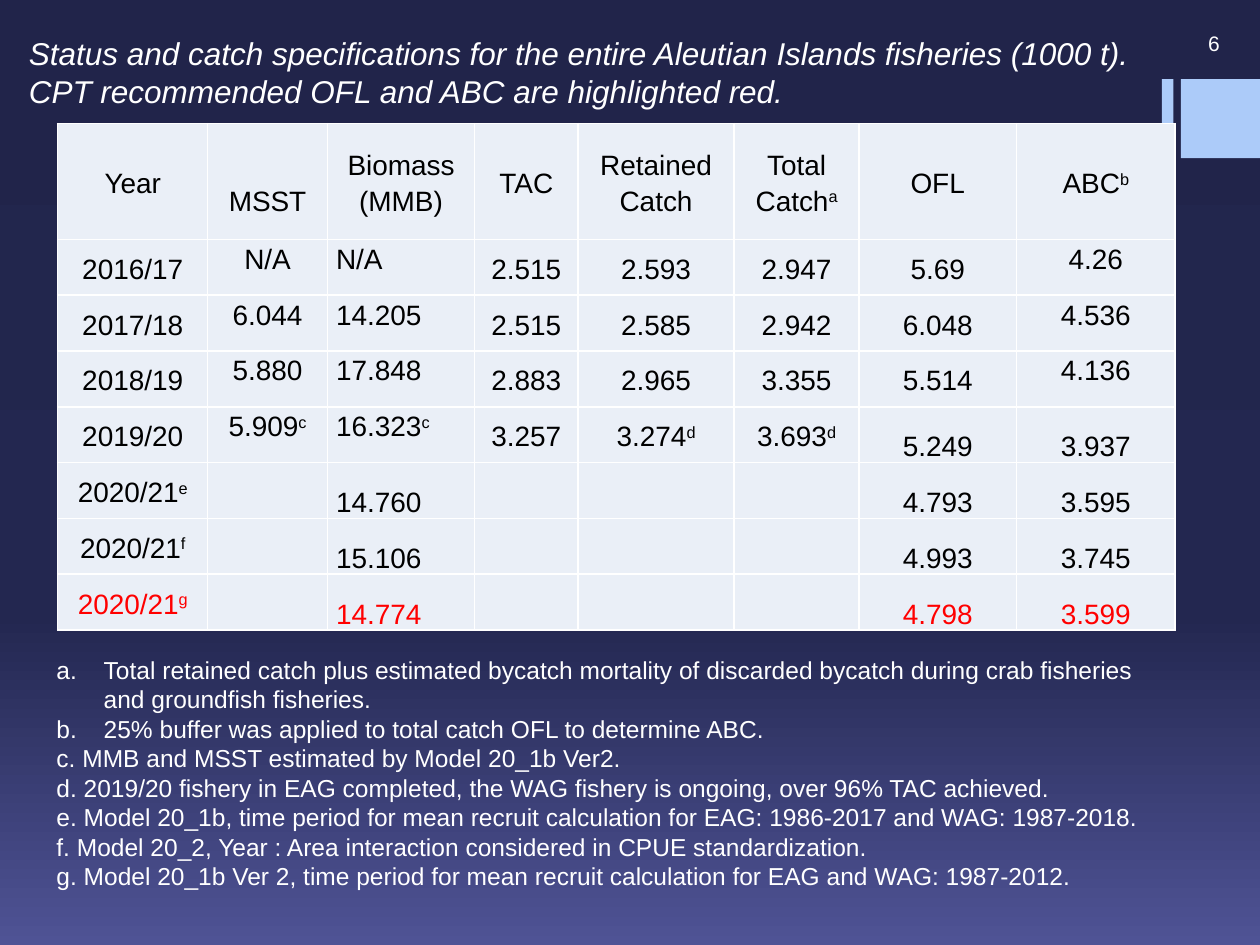
from copy import deepcopy

from pptx import Presentation
from pptx.dml.color import RGBColor
from pptx.enum.shapes import MSO_SHAPE
from pptx.enum.text import MSO_ANCHOR, PP_ALIGN
from pptx.oxml import parse_xml
from pptx.oxml.ns import nsdecls, qn
from pptx.oxml.xmlchemy import OxmlElement
from pptx.util import Pt

WHITE = RGBColor(0xFF, 0xFF, 0xFF)
BLACK = RGBColor(0, 0, 0)
RED = RGBColor(0xFF, 0, 0)
ACCENT = RGBColor(0xAC, 0xCB, 0xF9)
CELL_FILL = RGBColor(0xEA, 0xEF, 0xF7)
GRADIENT = [
    (0, RGBColor(0x21, 0x24, 0x4A)),
    (0.65, RGBColor(0x23, 0x27, 0x50)),
    (1, RGBColor(0x4F, 0x53, 0x95)),
]


def format_run(run, size, color):
    run.font.name = "Arial"
    run.font.size = Pt(size)
    run.font.color.rgb = color


def add_text(left, top, width, height, lines, size):
    text_frame = slide.shapes.add_textbox(Pt(left), Pt(top), Pt(width), Pt(height)).text_frame
    text_frame.word_wrap = True
    text_frame.text = "\n".join(lines)
    for paragraph in text_frame.paragraphs:
        format_run(paragraph.runs[0], size, WHITE)
    return text_frame


presentation = Presentation()
presentation.slide_width, presentation.slide_height = Pt(720), Pt(540)
slide = presentation.slides.add_slide(presentation.slide_layouts[6])

# Background: three-stop gradient, dark at the top
background_fill = slide.background.fill
background_fill.gradient()
background_fill.gradient_angle = 270
stop_list = slide.element.find(".//" + qn("a:gsLst"))
stop_list.append(deepcopy(stop_list[-1]))
for stop, (position, color) in zip(background_fill.gradient_stops, GRADIENT):
    stop.position = position
    stop.color.rgb = color

# Accent blocks at the right edge
for left, width in [(664, 6.5), (674.8, 45.2)]:
    shape = slide.shapes.add_shape(MSO_SHAPE.RECTANGLE, Pt(left), Pt(45.2), Pt(width), Pt(45.2))
    shape.shadow.inherit = False
    shape.fill.solid()
    shape.fill.fore_color.rgb = ACCENT
    shape.line.fill.background()

# Page number and title
page_number = add_text(630, 12.4, 74, 24, ["6"], 12)
page_number.vertical_anchor = MSO_ANCHOR.MIDDLE
page_number.paragraphs[0].alignment = PP_ALIGN.RIGHT

title = add_text(9.4, 16, 654, 51, [
    "Status and catch specifications for the entire Aleutian Islands fisheries (1000 t). "
    "CPT recommended OFL and ABC are highlighted red.",
], 18)
title.paragraphs[0].runs[0].font.italic = True

# Footnotes; the first two are lettered automatically
footnotes = add_text(25.2, 370.8, 654, 158, [
    "Total retained catch plus estimated bycatch mortality of discarded bycatch "
    "during crab fisheries and groundfish fisheries.",
    "25% buffer was applied to total catch OFL to determine ABC.",
    "c. MMB and MSST estimated by Model 20_1b Ver2.",
    "d. 2019/20 fishery in EAG completed, the WAG fishery is ongoing, over 96% TAC achieved.",
    "e. Model 20_1b, time period for mean recruit calculation for EAG: 1986-2017 and WAG: 1987-2018.",
    "f. Model 20_2, Year : Area interaction considered in CPUE standardization.",
    "g. Model 20_1b Ver 2, time period for mean recruit calculation for EAG and WAG: 1987-2012.",
], 14)
for paragraph in footnotes.paragraphs[:2]:
    properties = paragraph._p.get_or_add_pPr()
    properties.set("marL", str(Pt(27)))
    properties.set("indent", str(-Pt(27)))
    numbering = OxmlElement("a:buAutoNum")
    numbering.set("type", "alphaLcPeriod")
    properties.append(numbering)

# Table data: "^" starts a superscript; letters give each cell's vertical anchor
ANCHORS = {"T": MSO_ANCHOR.TOP, "M": MSO_ANCHOR.MIDDLE, "B": MSO_ANCHOR.BOTTOM}
ROWS = [
    ("MMMMMMMM", ["Year", "MSST", "Biomass (MMB)", "TAC", "Retained Catch", "Total Catch^a", "OFL", "ABC^b"]),
    ("MTTMMMMT", ["2016/17", "N/A", "N/A", "2.515", "2.593", "2.947", "5.69", "4.26"]),
    ("MTTMMMMT", ["2017/18", "6.044", "14.205", "2.515", "2.585", "2.942", "6.048", "4.536"]),
    ("MTTMMMMT", ["2018/19", "5.880", "17.848", "2.883", "2.965", "3.355", "5.514", "4.136"]),
    ("MTTMMMBB", ["2019/20", "5.909^c", "16.323^c", "3.257", "3.274^d", "3.693^d", "5.249", "3.937"]),
    ("MTBMMMBB", ["2020/21^e", "", "14.760", "", "", "", "4.793", "3.595"]),
    ("MTBMMMBB", ["2020/21^f", "", "15.106", "", "", "", "4.993", "3.745"]),
    ("MTBMMMBB", ["2020/21^g", "", "14.774", "", "", "", "4.798", "3.599"]),
]
COLUMN_WIDTHS = [85.7, 68.4, 84.2, 59, 89.3, 71.3, 90, 90.7]
HEADER_HEIGHT, ROW_HEIGHT = 66.2, 31.9
BIOMASS_COLUMN = 2

table = slide.shapes.add_table(
    len(ROWS), len(COLUMN_WIDTHS), Pt(33), Pt(70.6), Pt(sum(COLUMN_WIDTHS)), Pt(289.5)
).table
table.first_row = table.horz_banding = False
for column, width in zip(table.columns, COLUMN_WIDTHS):
    column.width = Pt(width)

for row_index, (anchors, values) in enumerate(ROWS):
    table.rows[row_index].height = Pt(ROW_HEIGHT if row_index else HEADER_HEIGHT)
    color = RED if row_index == len(ROWS) - 1 else BLACK
    for column_index, (anchor, value) in enumerate(zip(anchors, values)):
        cell = table.cell(row_index, column_index)
        cell.fill.solid()
        cell.fill.fore_color.rgb = CELL_FILL
        cell.vertical_anchor = ANCHORS[anchor]
        cell.margin_left = cell.margin_right = Pt(5)
        cell.margin_top = cell.margin_bottom = 0

        # White borders go before the fill in the cell properties
        cell_properties = cell._tc.get_or_add_tcPr()
        for position, side in enumerate("LRTB"):
            cell_properties.insert(position, parse_xml(
                f'<a:ln{side} {nsdecls("a")} w="{Pt(1)}"><a:solidFill>'
                f'<a:srgbClr val="{WHITE}"/></a:solidFill></a:ln{side}>'
            ))

        paragraph = cell.text_frame.paragraphs[0]
        paragraph.line_spacing = 1.15
        left_aligned = row_index and column_index == BIOMASS_COLUMN
        paragraph.alignment = PP_ALIGN.LEFT if left_aligned else PP_ALIGN.CENTER
        if not value:
            continue
        base, _, superscript = value.partition("^")
        paragraph.text = base
        if superscript:
            mark = paragraph.add_run()
            mark.text = superscript
            mark.font._element.set("baseline", "30000")
        for run in paragraph.runs:
            format_run(run, 16, color)

# The MSST heading sits one line lower than its neighbours
table.cell(0, 1).margin_top = Pt(21)

presentation.save("out.pptx")
